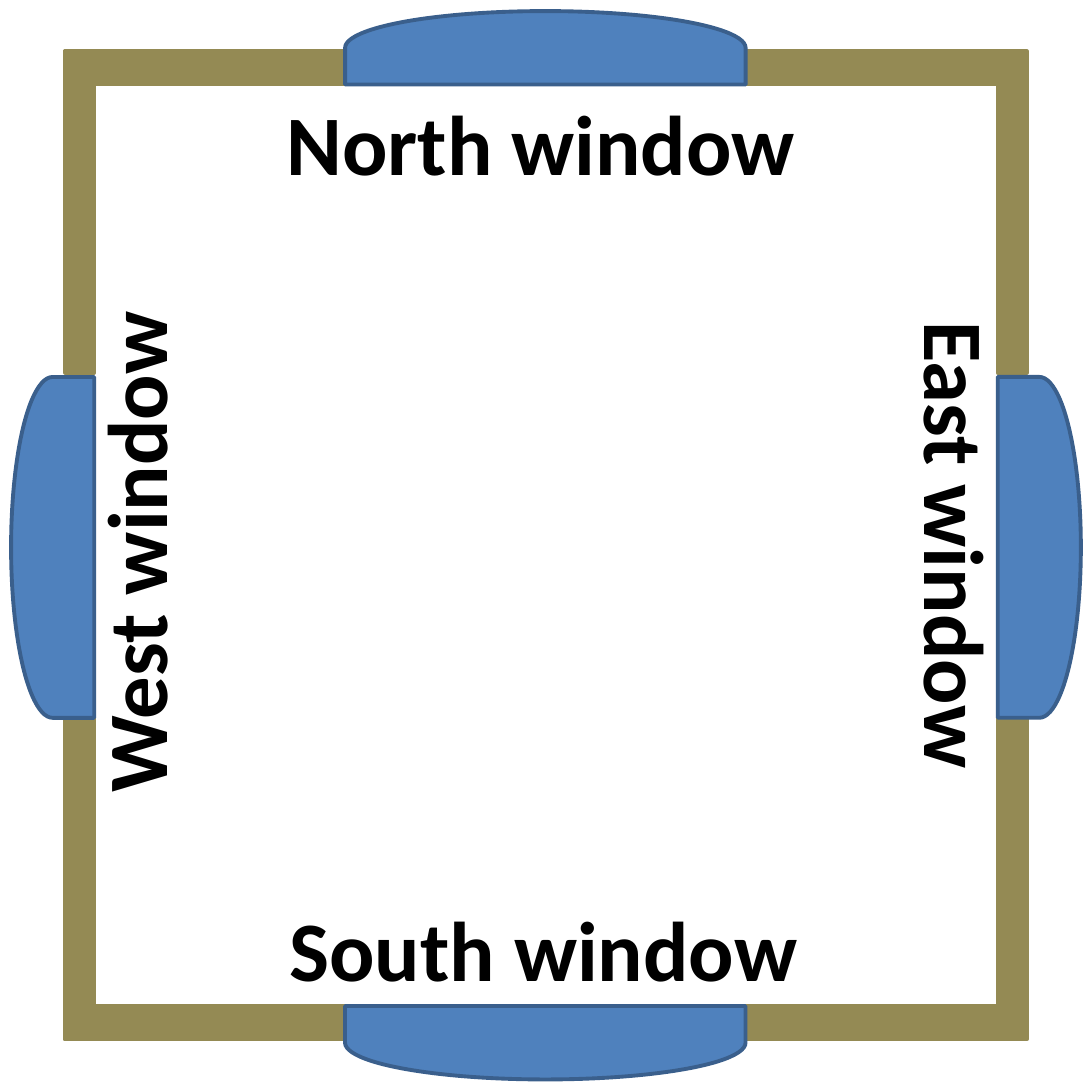
from pptx import Presentation
from pptx.dml.color import RGBColor
from pptx.enum.shapes import MSO_SHAPE
from pptx.enum.text import MSO_AUTO_SIZE
from pptx.util import Pt

PX = 9144
SIDE = 788
RECT = MSO_SHAPE.RECTANGLE
DELAY = MSO_SHAPE.FLOWCHART_DELAY
FIT_SHAPE = MSO_AUTO_SIZE.SHAPE_TO_FIT_TEXT

WALL = RGBColor(0x94, 0x8A, 0x54)
GLASS = RGBColor(0x4F, 0x81, 0xBD)
FRAME = RGBColor(0x3A, 0x5F, 0x8C)
BLACK = RGBColor(0, 0, 0)

UPRIGHT_WALLS = ((47, 720), (37, 518), (21, 232))
LEVEL_WALLS = ((47, 538), (37, 726), (202, 24))

WINDOWS = [
    ((720, 272, 60, 246), 0),
    ((367, 608, 53, 289), 90),
    ((8, 272, 60, 246), 180),
    ((367, -110, 53, 289), 270),
]

LABELS = [
    ("North window", (197, 61, 391, 84), 0),
    ("South window", (199, 642, 390, 84), 0),
    ("West window", (-88, 355, 370, 84), 270),
    ("East window", (518, 353, 346, 84), 90),
]


def emu(box):
    return [v * PX for v in box]


def add_block(slide, kind, box, fill, line, rotation=0):
    s = slide.shapes.add_shape(kind, *emu(box))
    s.shadow.inherit = False
    s.rotation = rotation
    s.fill.solid()
    s.fill.fore_color.rgb = fill
    s.line.color.rgb = line
    s.line.width = Pt(2)


def add_walls(slide, lefts, tops, size):
    for left in lefts:
        for top in tops:
            add_block(slide, RECT, (left, top, *size), WALL, WALL)


def add_label(slide, text, box, rotation):
    s = slide.shapes.add_textbox(*emu(box))
    s.rotation = rotation
    tf = s.text_frame
    tf.word_wrap = False
    tf.auto_size = FIT_SHAPE
    p = tf.paragraphs[0]
    p.text = text
    p.font.name = "Calibri"
    p.font.size = Pt(44)
    p.font.bold = True
    p.font.color.rgb = BLACK


def main():
    prs = Presentation()
    prs.slide_width = prs.slide_height = SIDE * PX
    slide = prs.slides.add_slide(prs.slide_layouts[6])
    for walls in (UPRIGHT_WALLS, LEVEL_WALLS):
        add_walls(slide, *walls)
    for box, rotation in WINDOWS:
        add_block(slide, DELAY, box, GLASS, FRAME, rotation)
    for label in LABELS:
        add_label(slide, *label)
    prs.save("out.pptx")


if __name__ == "__main__":
    main()
